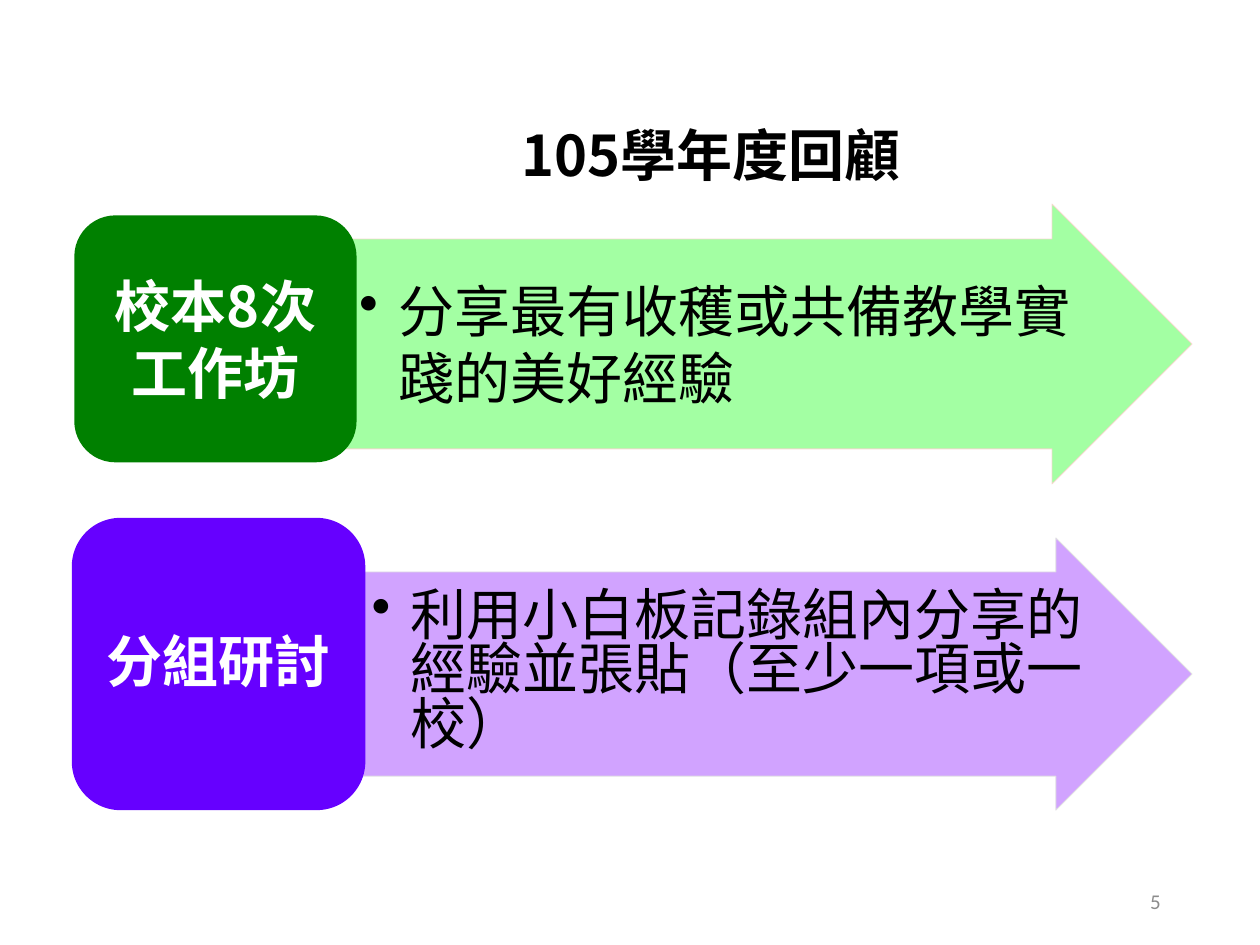
from lxml import etree
from pptx import Presentation
from pptx.dml.color import RGBColor
from pptx.enum.shapes import MSO_SHAPE
from pptx.enum.text import MSO_ANCHOR, PP_ALIGN
from pptx.oxml.ns import qn
from pptx.util import Inches, Pt

ROUNDED = MSO_SHAPE.ROUNDED_RECTANGLE
ARROW = MSO_SHAPE.RIGHT_ARROW
MIDDLE, TOP = MSO_ANCHOR.MIDDLE, MSO_ANCHOR.TOP
LEFT, CENTER, RIGHT = PP_ALIGN.LEFT, PP_ALIGN.CENTER, PP_ALIGN.RIGHT

BLACK = RGBColor(0x00, 0x00, 0x00)
WHITE = RGBColor(0xFF, 0xFF, 0xFF)
GRAY = RGBColor(0x8C, 0x8C, 0x8C)
GREEN = RGBColor(0x00, 0x80, 0x00)
LIGHT_GREEN = RGBColor(0x99, 0xFF, 0x99)
PINK = RGBColor(0xF8, 0xD7, 0xCE)
PURPLE = RGBColor(0x66, 0x00, 0xFF)
LIGHT_PURPLE = RGBColor(0xCC, 0x99, 0xFF)
LIGHT_GRAY = RGBColor(0xE1, 0xE1, 0xE1)

CJK_FONT = "Noto Sans CJK SC"
DEFAULT_INSETS = (0.1, 0.05, 0.1, 0.05)
ARROW_INSETS = (0.2, 0.02, 0.02, 0.02)
LABEL_INSETS = (0.13, 0.07, 0.13, 0.07)


def write_text(shape, text, size=32, color=BLACK, font=CJK_FONT, bold=False,
               align=LEFT, anchor=MIDDLE, insets=DEFAULT_INSETS,
               spacing=None, bullet=False):
    frame = shape.text_frame
    frame.word_wrap = True
    frame.vertical_anchor = anchor
    (frame.margin_left, frame.margin_top,
     frame.margin_right, frame.margin_bottom) = map(Inches, insets)
    paragraph = frame.paragraphs[0]
    paragraph.alignment = align
    paragraph.line_spacing = spacing
    if bullet:
        properties = paragraph._p.get_or_add_pPr()
        properties.set("marL", str(Inches(0.31)))
        properties.set("indent", str(Inches(-0.31)))
        etree.SubElement(properties, qn("a:buChar"), char="•")
    run = paragraph.add_run()
    run.text = text
    run.font.size = Pt(size)
    run.font.bold = bold
    run.font.name = font
    run.font.color.rgb = color
    etree.SubElement(run._r.get_or_add_rPr(), qn("a:ea"), typeface=font)


def add_filled_shape(slide, kind, box, fill):
    shape = slide.shapes.add_shape(kind, *map(Inches, box))
    shape.shadow.inherit = False
    shape.fill.solid()
    shape.fill.fore_color.rgb = fill
    shape.line.fill.background()
    return shape


def add_arrow(slide, box, text, fill, outline, spacing=None):
    arrow = add_filled_shape(slide, ARROW, box, fill)
    arrow.adjustments[0] = 0.75
    arrow.adjustments[1] = 0.5
    arrow.line.color.rgb = outline
    arrow.line.width = Pt(0.5)
    for color in arrow._element.spPr.iter(qn("a:srgbClr")):
        etree.SubElement(color, qn("a:alpha"), val="90000")
    write_text(arrow, text, insets=ARROW_INSETS, spacing=spacing, bullet=True)


def add_label(slide, box, text, fill, spacing=None):
    label = add_filled_shape(slide, ROUNDED, box, fill)
    write_text(label, text, color=WHITE, bold=True, align=CENTER,
               insets=LABEL_INSETS, spacing=spacing)


def add_text_box(slide, box, text, **text_format):
    write_text(slide.shapes.add_textbox(*map(Inches, box)), text, **text_format)


def main():
    presentation = Presentation()
    presentation.slide_width = Inches(10)
    presentation.slide_height = Inches(7.5)
    slide = presentation.slides.add_slide(presentation.slide_layouts[6])

    add_arrow(slide, (2.65, 1.62, 6.81, 2.22), "分享最有收穫或共備教學實踐的美好經驗",
              LIGHT_GREEN, PINK)
    add_label(slide, (0.59, 1.71, 2.24, 1.96), "校本8次工作坊", GREEN)
    add_arrow(slide, (2.75, 4.27, 6.71, 2.16),
              "利用小白板記錄組內分享的經驗並張貼（至少一項或一校）",
              LIGHT_PURPLE, LIGHT_GRAY, spacing=Pt(31))
    add_label(slide, (0.57, 4.11, 2.33, 2.32), "分組研討", PURPLE, spacing=0.9)
    add_text_box(slide, (4.04, 0.91, 4.37, 0.64), "105學年度回顧",
                 bold=True, anchor=TOP)
    add_text_box(slide, (7.06, 6.95, 2.25, 0.4), "5", size=12, color=GRAY,
                 font="Calibri", align=RIGHT)
    presentation.save("out.pptx")


if __name__ == "__main__":
    main()
